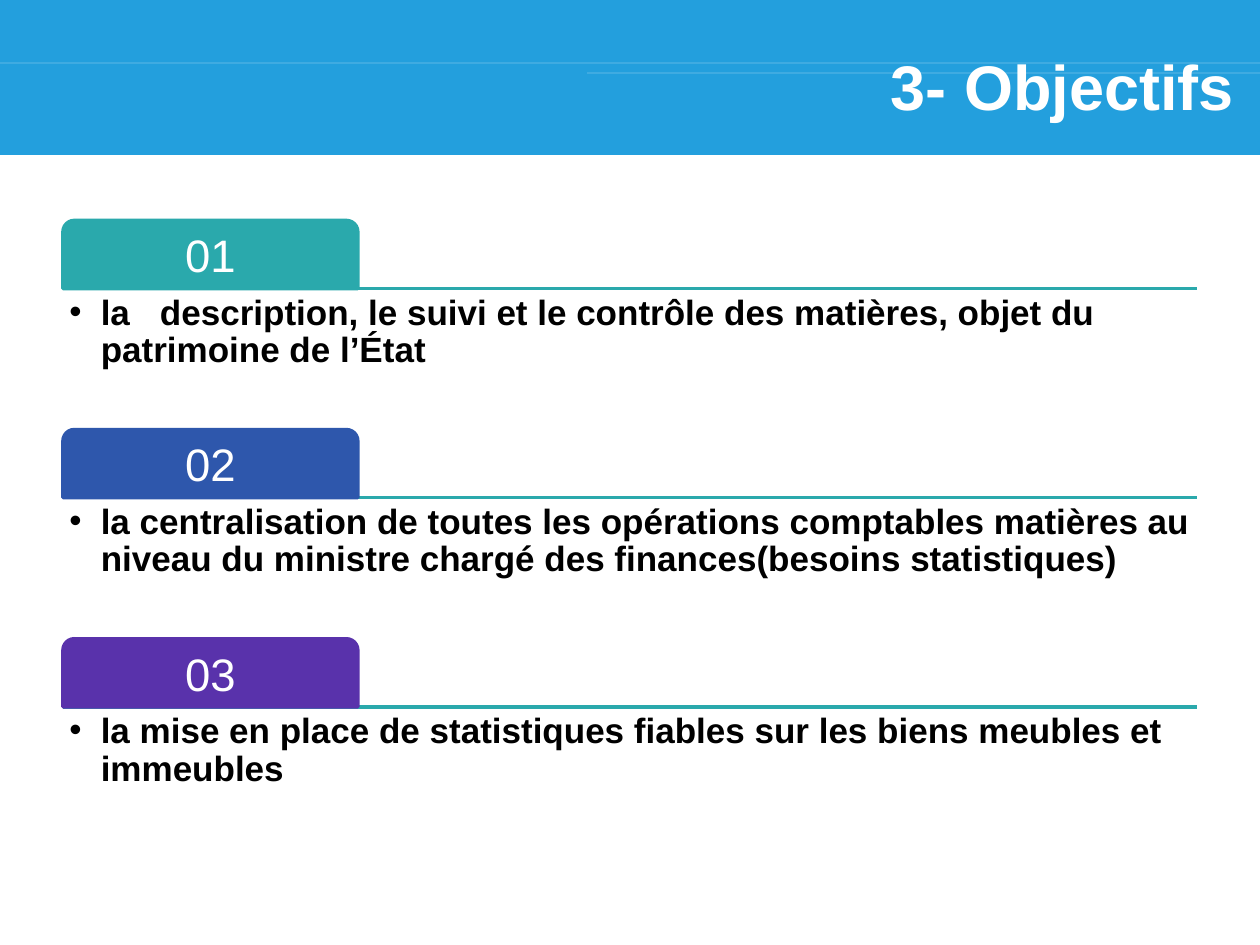
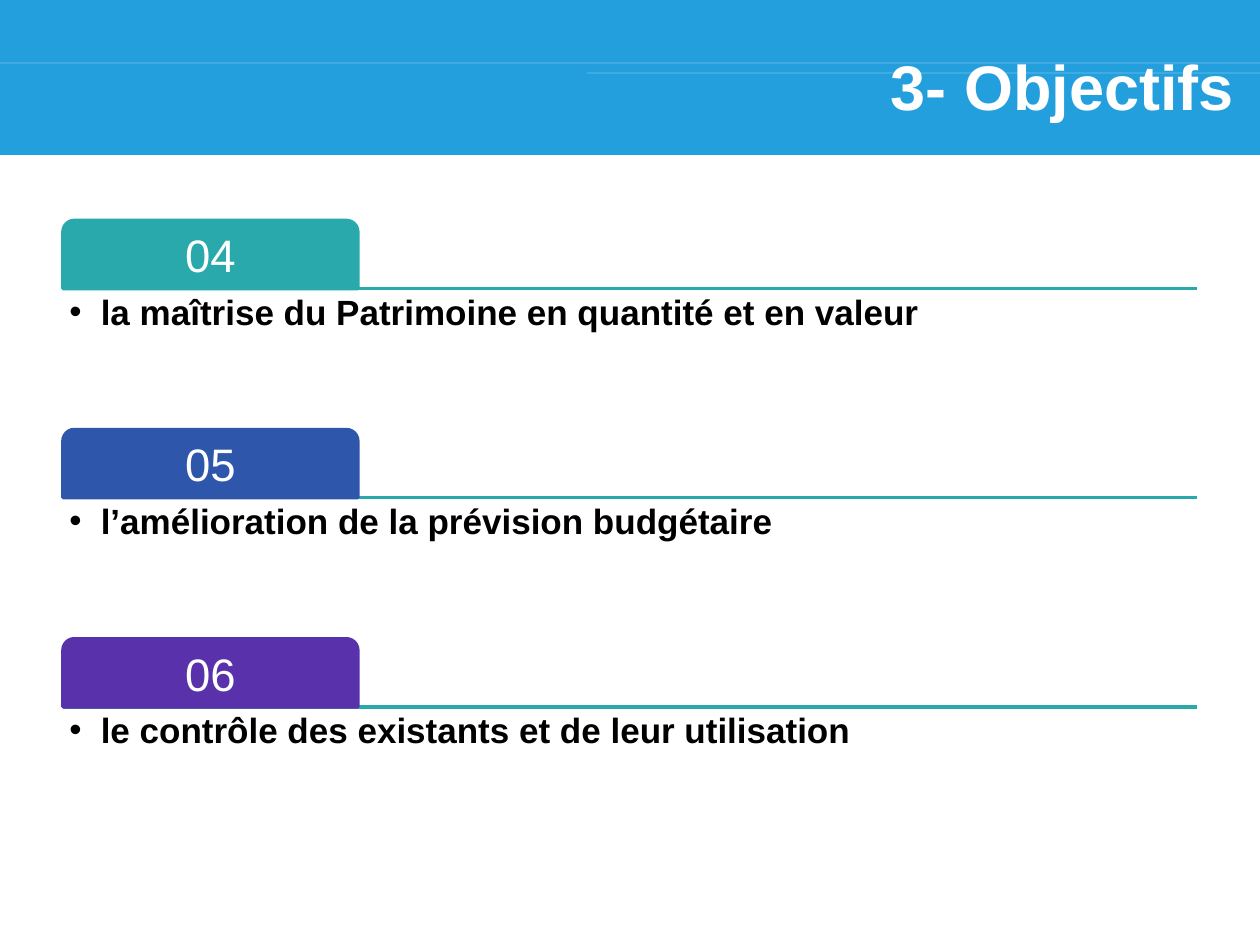
from lxml import etree
from pptx import Presentation
from pptx import util as u
from pptx.dml.color import RGBColor
from pptx.enum import shapes, text
from pptx.oxml import ns

COLORS = {
    "band": "239FDD",
    "white": "FFFFFF",
    "black": "000000",
    "teal": "2AA9AC",
    "blue": "2E57AC",
    "purple": "5932AB",
}
FONT = "Arial"
TITLE = "3- Objectifs"
TAB_COLORS = ["teal", "blue", "purple"]
LEFT, FIRST_TOP, ROW_STEP = 0.5, 1.75, 1.66
ROW_WIDTH, TAB_WIDTH, TAB_HEIGHT, BODY_HEIGHT = 9, 2.34, 0.54, 1.09
OBJECTIVES = [
    [
        "la\tdescription, le suivi et le contrôle des matières, objet du patrimoine de l’État",
        "la centralisation de toutes les opérations comptables matières au niveau du "
        "ministre chargé des finances(besoins statistiques)",
        "la mise en place de statistiques fiables sur les biens meubles et immeubles",
    ],
    [
        "la maîtrise du Patrimoine en quantité et en valeur",
        "l’amélioration de la prévision budgétaire",
        "le contrôle des existants et de leur utilisation",
    ],
]


def rgb(color):
    return RGBColor.from_string(COLORS[color])


def add_element(parent, tag, **attributes):
    return etree.SubElement(parent, ns.qn(tag), attributes)


def write_text(shape, content, size, color, bold=False, align="LEFT", anchor="TOP",
               insets=(0.1, 0.05, 0.1, 0.05), spacing=1.0, indent=0, tab_stop=None):
    frame = shape.text_frame
    frame.word_wrap = True
    frame.vertical_anchor = text.MSO_ANCHOR[anchor]
    frame.margin_left, frame.margin_top, frame.margin_right, frame.margin_bottom = map(u.Inches, insets)
    paragraph = frame.paragraphs[0]
    if indent:
        properties = paragraph._p.get_or_add_pPr()
        properties.set("marL", str(u.Inches(indent)))
        properties.set("indent", str(-u.Inches(indent)))
        add_element(properties, "a:buFont", typeface=FONT)
        add_element(properties, "a:buChar", char="•")
        if tab_stop:
            tabs = add_element(properties, "a:tabLst")
            add_element(tabs, "a:tab", pos=str(u.Inches(tab_stop)), algn="l")
    paragraph.alignment = text.PP_ALIGN[align]
    paragraph.line_spacing = spacing
    run = paragraph.add_run()
    run.text = content
    run.font.name = FONT
    run.font.size = u.Pt(size)
    run.font.bold = bold
    run.font.color.rgb = rgb(color)


class Deck:
    def __init__(self):
        self.presentation = Presentation()
        self.presentation.slide_width = u.Inches(10)
        self.presentation.slide_height = u.Inches(7.5)
        self.slide = None

    def add_slide(self):
        self.slide = self.presentation.slides.add_slide(self.presentation.slide_layouts[6])
        self.block("RECTANGLE", 0, 0, 10, 1.23, "band")
        self.rule(0, 0.5, 10, "white", 0.75, alpha=20)
        self.rule(4.66, 0.58, 10, "white", 0.75, alpha=20)

    def block(self, kind, left, top, width, height, color, line_width=None):
        shape = self.slide.shapes.add_shape(
            shapes.MSO_SHAPE[kind], *map(u.Inches, (left, top, width, height)))
        shape.shadow.inherit = False
        shape.fill.solid()
        shape.fill.fore_color.rgb = rgb(color)
        if line_width:
            shape.line.color.rgb = rgb(color)
            shape.line.width = u.Pt(line_width)
        else:
            shape.line.fill.background()
        return shape

    def rule(self, left, top, right, color, width, alpha=None):
        line = self.slide.shapes.add_connector(
            shapes.MSO_CONNECTOR.STRAIGHT, *map(u.Inches, (left, top, right, top)))
        line.line.color.rgb = rgb(color)
        line.line.width = u.Pt(width)
        properties = line._element.spPr
        if alpha:
            fill_color = properties.find(".//" + ns.qn("a:srgbClr"))
            add_element(fill_color, "a:alpha", val=str(alpha * 1000))
        add_element(properties, "a:effectLst")

    def text_box(self, left, top, width, height, content, **style):
        shape = self.slide.shapes.add_textbox(*map(u.Inches, (left, top, width, height)))
        write_text(shape, content, **style)

    def title(self, content):
        self.text_box(6.57, 0.24, 3.32, 0.87, content, size=36, color="white",
                      bold=True, align="RIGHT", anchor="MIDDLE")

    def objective(self, row, number, content):
        top = FIRST_TOP + row * ROW_STEP
        base = top + TAB_HEIGHT
        self.rule(LEFT, base, LEFT + ROW_WIDTH, "teal", 2)
        number_tab = self.block("ROUND_2_SAME_RECTANGLE", LEFT, top, TAB_WIDTH, TAB_HEIGHT,
                                TAB_COLORS[row], line_width=2)
        write_text(number_tab, f"{number:02d}", size=26, color="white", align="CENTER",
                   anchor="MIDDLE", insets=(0.08, 0.08, 0.08, 0.05), spacing=0.9)
        self.text_box(LEFT, base, ROW_WIDTH, BODY_HEIGHT, content, size=20, color="black",
                      bold=True, insets=(0.05,) * 4, spacing=0.9, indent=0.25,
                      tab_stop=0.72 if "\t" in content else None)


def main():
    deck = Deck()
    number = 0
    for objectives in OBJECTIVES:
        deck.add_slide()
        for row, content in enumerate(objectives):
            number += 1
            deck.objective(row, number, content)
        deck.title(TITLE)
    deck.presentation.save("out.pptx")


if __name__ == "__main__":
    main()
